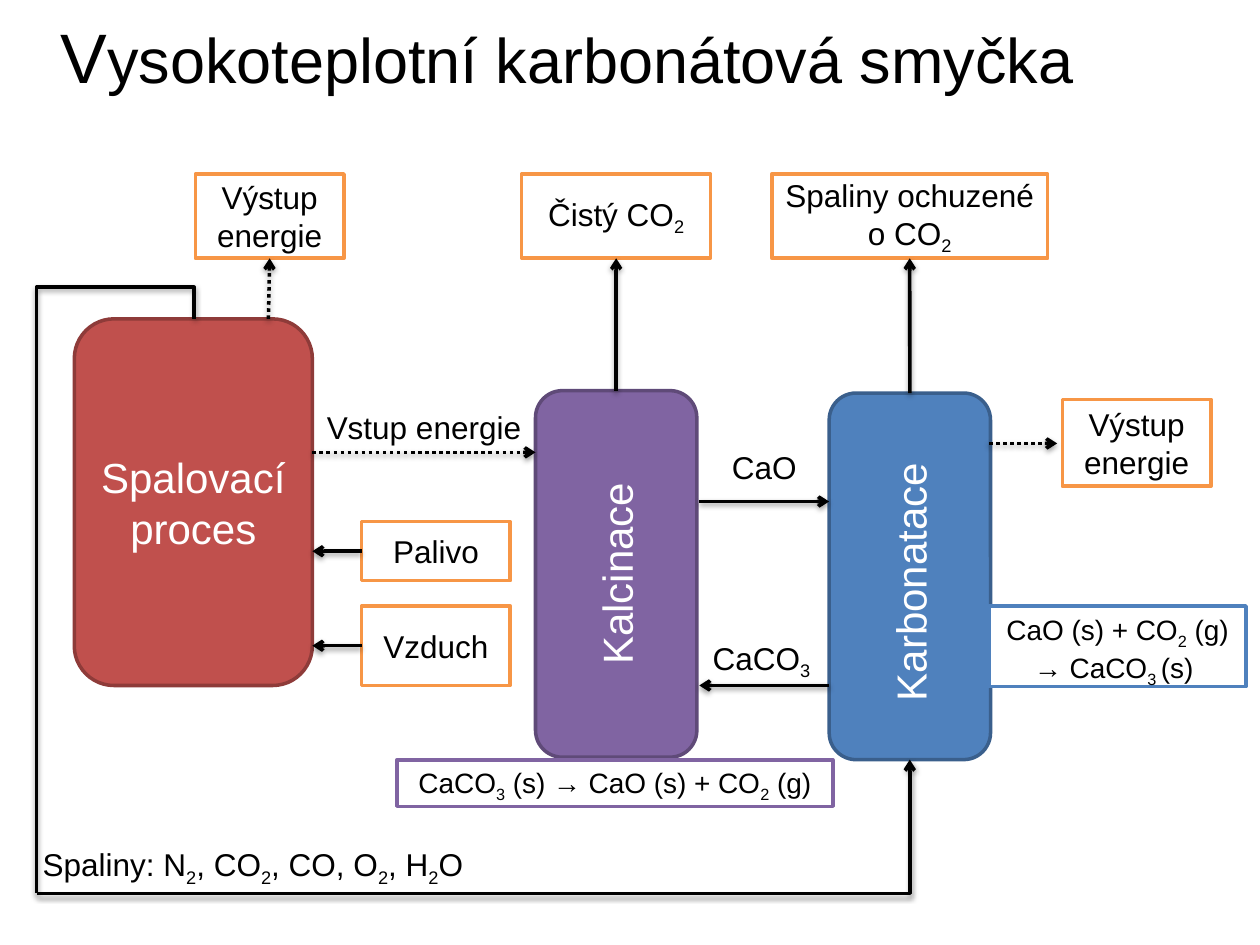
from dataclasses import dataclass

from lxml.etree import SubElement
from pptx import Presentation
from pptx.dml.color import RGBColor
from pptx.enum.dml import MSO_LINE
from pptx.enum.shapes import MSO_CONNECTOR as CONN, MSO_SHAPE as SHAPE
from pptx.enum.text import MSO_ANCHOR as ANCHOR, MSO_AUTO_SIZE as AUTO, PP_ALIGN as ALIGN
from pptx.oxml.ns import qn
from pptx.util import Pt


@dataclass(frozen=True)
class Theme:
    font: str = "Arial"
    black: str = "000000"
    white: str = "FFFFFF"
    red: str = "C0504D"
    red_edge: str = "8E3B39"
    purple: str = "8064A2"
    purple_edge: str = "5F4A78"
    blue: str = "4F81BD"
    blue_edge: str = "3A5F8C"
    orange: str = "F79646"
    initial: int = 40
    title: int = 36
    unit: int = 24
    label: int = 18
    equation: int = 16
    line: int = 2


@dataclass(frozen=True)
class Box:
    x: float
    y: float
    w: float
    h: float

    def point(self, dx, dy):
        return Pt(self.x + dx), Pt(self.y + dy)

    def frame(self, dx, dy, w, h):
        return (*self.point(dx, dy), Pt(w), Pt(h))


T = Theme()
TOP, LEFT, BOTTOM = 0, 1, 2
FLOW_W = 85
OUT_H = 48.2
UNIT_H = 209.5
REACTOR_W = 92.2
LABEL_H = 28.8


def rgb(value):
    return RGBColor.from_string(value)


def add_run(p, text, size, color=T.black, sub=False):
    r = p.add_run()
    r.text = text
    r.font.name = T.font
    r.font.size = Pt(size)
    r.font.color.rgb = rgb(color)
    if sub:
        r.font._element.set("baseline", "-25000")


def write(tf, text, size=T.label, color=T.black, align=ALIGN.CENTER,
          anchor=ANCHOR.MIDDLE, grow=False):
    tf.word_wrap = True
    tf.vertical_anchor = ANCHOR.TOP if grow else anchor
    tf.auto_size = AUTO.SHAPE_TO_FIT_TEXT if grow else AUTO.NONE
    p = tf.paragraphs[0]
    p.alignment = align
    for i, piece in enumerate(text.split("_")):
        if piece:
            add_run(p, piece, size, color, sub=i % 2 == 1)


def add_box(s, frame, text, fill=T.white, edge=T.orange, kind=SHAPE.RECTANGLE, **fmt):
    sp = s.shapes.add_shape(kind, *frame)
    sp.shadow.inherit = False
    sp.fill.solid()
    sp.fill.fore_color.rgb = rgb(fill)
    sp.line.color.rgb = rgb(edge)
    sp.line.width = Pt(T.line)
    write(sp.text_frame, text, **fmt)
    return sp


def add_unit(s, frame, text, fill, edge, upright=False):
    sp = add_box(s, frame, text, fill, edge, SHAPE.ROUNDED_RECTANGLE,
                 size=T.unit, color=T.white)
    if upright:
        sp.text_frame._txBody.bodyPr.set("vert", "vert270")
    return sp


def add_label(s, frame, text, align=ALIGN.CENTER):
    write(s.shapes.add_textbox(*frame).text_frame, text, align=align, grow=True)


def style_line(cn, dotted=False, head=True):
    cn.line.color.rgb = rgb(T.black)
    cn.line.width = Pt(T.line)
    if dotted:
        cn.line.dash_style = MSO_LINE.ROUND_DOT
    if head:
        SubElement(cn.line._get_or_add_ln(), qn("a:tailEnd"), type="arrow")
    effects = SubElement(cn._element.spPr, qn("a:effectLst"))
    shadow = SubElement(effects, qn("a:outerShdw"), blurRad=str(Pt(3.1)), dist=str(Pt(1.6)),
                        dir="5400000", rotWithShape="0")
    color = SubElement(shadow, qn("a:srgbClr"), val=T.black)
    SubElement(color, qn("a:alpha"), val="38000")


def add_arrow(s, start, end, begin_at=None, end_at=None, dotted=False):
    cn = s.shapes.add_connector(CONN.STRAIGHT, *start, *end)
    if begin_at:
        cn.begin_connect(*begin_at)
    if end_at:
        cn.end_connect(*end_at)
    style_line(cn, dotted)


def title_region(s, box, initial, rest):
    sp = s.shapes.title
    sp.left, sp.top, sp.width, sp.height = box.frame(0, 0, box.w, box.h)
    write(sp.text_frame, initial, size=T.initial)
    add_run(sp.text_frame.paragraphs[0], rest, T.title)


def combustion_region(s, box):
    unit_y, unit_w = box.h - UNIT_H, 136
    add_unit(s, box.frame(0, unit_y, unit_w, UNIT_H), "Spalovací proces", T.red, T.red_edge)
    flow_x = box.w - FLOW_W
    for text, y, h in (("Palivo", 198.7, 33.8), ("Vzduch", 246.9, 45.4)):
        flow = add_box(s, box.frame(flow_x, y, FLOW_W, h), text)
        middle = y + h / 2
        add_arrow(s, box.point(flow_x, middle), box.point(unit_w, middle),
                  begin_at=(flow, LEFT))
    energy = add_box(s, box.frame(69.1, 0, FLOW_W, OUT_H), "Výstup energie")
    add_arrow(s, box.point(110.9, unit_y), box.point(111.6, OUT_H),
              end_at=(energy, BOTTOM), dotted=True)


def reactor_region(s, box, unit_x, unit_y, name, fill, edge, product, product_x, product_w,
                   equation, equation_frame):
    unit = add_unit(s, box.frame(unit_x, unit_y, REACTOR_W, UNIT_H), name, fill, edge,
                    upright=True)
    out = add_box(s, box.frame(product_x, 0, product_w, OUT_H), product)
    middle = unit_x + REACTOR_W / 2
    add_arrow(s, box.point(middle, unit_y), box.point(middle, OUT_H),
              begin_at=(unit, TOP), end_at=(out, BOTTOM))
    add_box(s, box.frame(*equation_frame), equation, edge=fill, size=T.equation, grow=True)


def energy_output_region(s, box):
    add_box(s, box.frame(box.w - FLOW_W, 0, FLOW_W, box.h), "Výstup energie")
    add_arrow(s, box.point(0, 25.2), box.point(38.9, 25.2), dotted=True)


def energy_input_region(s, box):
    add_label(s, box.frame(0, 0, box.w, box.h), "Vstup energie")
    add_arrow(s, box.point(8.6, box.h), box.point(136.1, box.h), dotted=True)


def exchange_region(s, box):
    add_label(s, box.frame(0, 0, box.w, LABEL_H), "CaO")
    add_arrow(s, box.point(0, 33.9), box.point(box.w, 33.9))
    add_label(s, box.frame(-2.2, 108.7, 75.6, LABEL_H), "CaCO_3_")
    add_arrow(s, box.point(box.w, box.h), box.point(0, box.h))


def flue_gas_region(s, box):
    start_x, start_y = 90, 18
    drop = box.h - start_y
    mid_x, mid_y = start_x / 2, start_y + drop / 2
    riser = s.shapes.add_connector(
        CONN.ELBOW,
        *box.point(mid_x + drop / 2, mid_y + start_x / 2),
        *box.point(mid_x - drop / 2, mid_y - start_x / 2))
    riser._element.spPr.find(qn("a:xfrm")).set("rot", "16200000")
    guides = riser._element.spPr.find(qn("a:prstGeom")).find(qn("a:avLst"))
    SubElement(guides, qn("a:gd"), name="adj1", fmla="val -5500")
    style_line(riser, head=False)

    feed = s.shapes.add_connector(CONN.ELBOW, *box.point(0, box.h), *box.point(box.w, 269.9))
    feed._element.spPr.find(qn("a:prstGeom")).set("prst", "bentConnector2")
    style_line(feed)
    add_label(s, box.frame(-3.6, 315.3, 273.6, LABEL_H),
              "Spaliny: N_2_, CO_2_, CO, O_2_, H_2_O", align=ALIGN.LEFT)


def main():
    prs = Presentation()
    prs.slide_width, prs.slide_height = Pt(720), Pt(540)
    s = prs.slides.add_slide(prs.slide_layouts[5])
    title_region(s, Box(0, 1.4, 648, 61.2), "V", "ysokoteplotní karbonátová smyčka")
    combustion_region(s, Box(42.5, 99.4, 249.1, 292.3))
    reactor_region(s, Box(226.8, 99.4, 249.1, 361.4), 79.2, 123.8, "Kalcinace",
                   T.purple, T.purple_edge, "Čistý CO_2_", 71.3, 108,
                   "CaCO_3_ (s) → CaO (s) + CO_2_ (g)", (0, 334.8, 249.1, 26.6))
    reactor_region(s, Box(441, 99.4, 271.1, 334.7), 32.8, 125.2, "Karbonatace ",
                   T.blue, T.blue_edge, "Spaliny ochuzené o CO_2_", 0, 157.7,
                   "CaO (s) + CO_2_ (g) → CaCO_3 _(s) ", (124.2, 246.9, 146.9, 46.1))
    flue_gas_region(s, Box(20.9, 164.2, 499, 346.3))
    energy_input_region(s, Box(169.9, 229.7, 144.7, LABEL_H))
    exchange_region(s, Box(399.6, 252.7, 74.2, 139))
    energy_output_region(s, Box(565.2, 228.2, 126.8, 49.7))
    prs.save("out.pptx")


if __name__ == "__main__":
    main()
